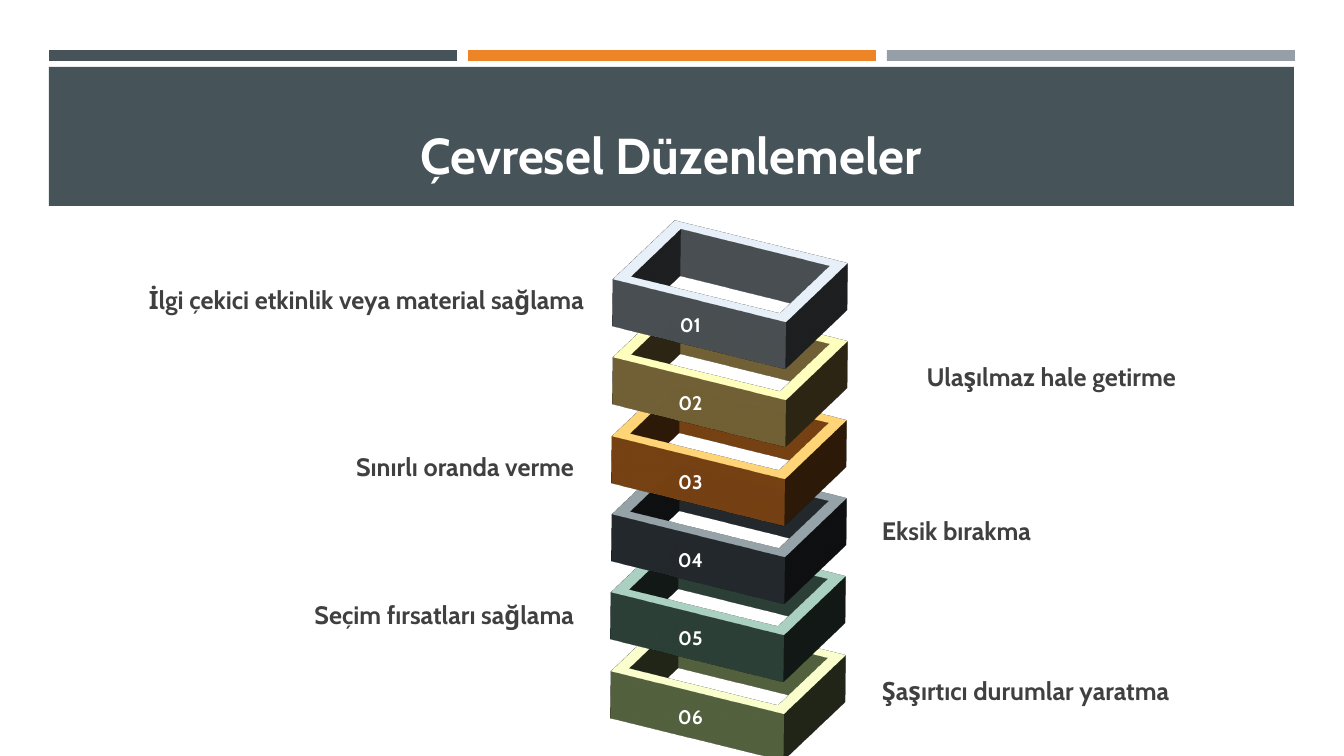
from lxml import etree
from pptx import Presentation
from pptx.dml.color import RGBColor
from pptx.enum import shapes, text
from pptx.oxml import ns

PX = 914400 / 100.8
BOX_STEP = 78.3
DARK = "404040"
LEFT, CENTER, RIGHT = text.PP_ALIGN.LEFT, text.PP_ALIGN.CENTER, text.PP_ALIGN.RIGHT


def paint(shape, color):
    shape.shadow.inherit = False
    shape.fill.solid()
    shape.fill.fore_color.rgb = RGBColor.from_string(color)
    shape.line.fill.background()


def write(shape, words, size, color, align):
    frame = shape.text_frame
    frame.text = words
    frame.word_wrap = True
    paragraph = frame.paragraphs[0]
    paragraph.alignment = align
    font = paragraph.runs[0].font
    font.name, font.size, font.bold = "Cabin", size * 12700, True
    font.color.rgb = RGBColor.from_string(color)
    return frame


presentation = Presentation()
presentation.slide_width = round(1344 * PX)
presentation.slide_height = round(756 * PX)
slide = presentation.slides.add_slide(presentation.slide_layouts[5])

# Header bars and title band
bars = [
    (49, 50, 408, 11, "465359"),
    (887, 50, 408, 11, "969FA7"),
    (468, 50, 408, 11, "ED8428"),
    (49, 67, 1245, 139, "465359"),
]
for *place, color in bars:
    bar = slide.shapes.add_shape(shapes.MSO_SHAPE.RECTANGLE, *[round(n * PX) for n in place])
    paint(bar, color)

title = slide.shapes.title
title.left, title.top, title.width, title.height = [round(n * PX) for n in (63, 81, 1216, 109)]
title_frame = write(title, "Çevresel Düzenlemeler", 36, "FFFFFF", CENTER)
title_frame.vertical_anchor = text.MSO_ANCHOR.BOTTOM
title_frame.auto_size = text.MSO_AUTO_SIZE.NONE
title.element.getparent().append(title.element)  # in front of the band

# Stack of frames, turned and extruded in 3D, bottom one first
DEPTH_XML = [
    f'<a:scene3d {ns.nsdecls("a")}><a:camera prst="isometricOffAxis2Top">'
    '<a:rot lat="18468000" lon="2343000" rev="18810000"/></a:camera>'
    '<a:lightRig rig="threePt" dir="t"/></a:scene3d>',
    f'<a:sp3d {ns.nsdecls("a")} extrusionH="482600"/>',
]
box_colors = ["969FA7", "E6C46D", "ED8428", "465359", "5A8071", "A9C37C"]
for index, color in reversed(list(enumerate(box_colors))):
    place = (634 - index // 2, 202 + round(index * BOX_STEP), 193, 139)
    box = slide.shapes.add_shape(shapes.MSO_SHAPE.FRAME, *[round(n * PX) for n in place])
    box.adjustments[0] = 0.098
    paint(box, color)
    for depth in DEPTH_XML:
        box.element.spPr.append(etree.fromstring(depth))

# Labels and box numbers
labels = [
    (24, 284, 560, 30, "İlgi çekici etkinlik veya material sağlama", 18, DARK, RIGHT),
    (814, 361, 362, 30, "Ulaşılmaz hale getirme", 18, DARK, RIGHT),
    (148, 451, 426, 30, "Sınırlı oranda verme", 18, DARK, RIGHT),
    (882, 515, 229, 30, "Eksik bırakma", 18, DARK, LEFT),
    (170, 599, 404, 30, "Seçim fırsatları sağlama", 18, DARK, RIGHT),
    (882, 675, 379, 30, "Şaşırtıcı durumlar yaratma", 18, DARK, LEFT),
]
numbers = [(612, 313 + round(index * BOX_STEP), 157, 24, f"{index + 1:02}", 14, "FFFFFF", CENTER)
           for index in range(len(box_colors))]
for left, top, width, height, *content in labels + numbers:
    label = slide.shapes.add_textbox(*[round(n * PX) for n in (left, top, width, height)])
    frame = write(label, *content)
    frame.margin_left = frame.margin_top = frame.margin_right = frame.margin_bottom = 0
    frame.auto_size = text.MSO_AUTO_SIZE.SHAPE_TO_FIT_TEXT

presentation.save("out.pptx")
